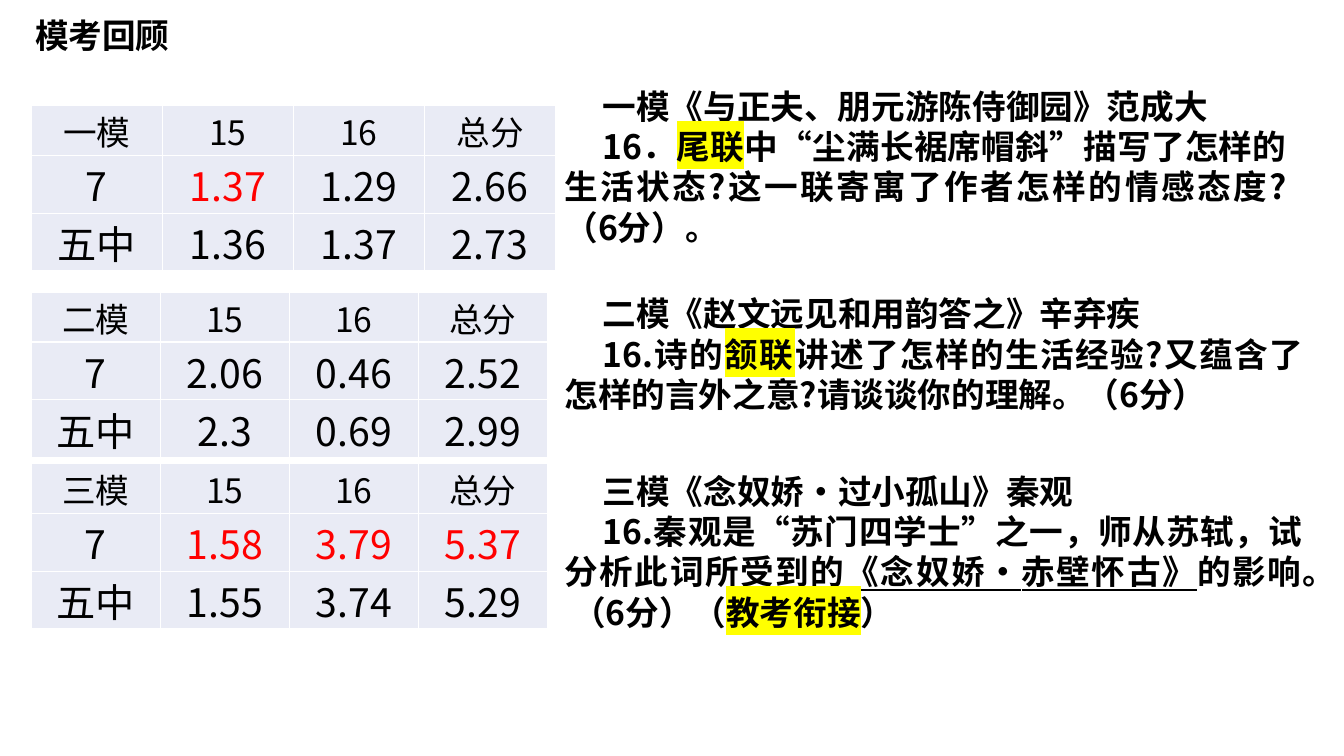
import dataclasses

import pptx
import pptx.dml.color
import pptx.enum.text
import pptx.oxml
import pptx.oxml.ns
import pptx.util
from pptx.util import Inches


@dataclasses.dataclass(frozen=True)
class Theme:
    ink: str = "000000"
    alert: str = "FF0000"
    cell: str = "E9EBF5"
    border: str = "FFFFFF"
    marker: str = "FFFF00"
    body_font: str = "Noto Sans CJK SC"
    title_font: str = "Noto Sans CJK JP"
    text_size: int = 24
    score_size: int = 28


def xml(tag, attributes="", content=""):
    namespace = pptx.oxml.ns.nsdecls("a")
    return pptx.oxml.parse_xml(f"<a:{tag} {namespace} {attributes}>{content}</a:{tag}>")


def solid(color):
    return f'<a:solidFill><a:srgbClr val="{color}"/></a:solidFill>'


class ReviewSlide:
    def __init__(self, presentation, theme):
        self.theme = theme
        self.slide = presentation.slides.add_slide(presentation.slide_layouts[6])

    def style(self, paragraph, size, color, typeface, bold=False):
        font = paragraph.font
        font.size = pptx.util.Pt(size)
        font.bold = bold
        font.color.rgb = pptx.dml.color.RGBColor.from_string(color)
        font.name = typeface
        font._element.append(xml("ea", f'typeface="{typeface}"'))

    def text(self, left, top, width, height, paragraphs, typeface, question=False):
        frame = self.slide.shapes.add_textbox(
            Inches(left), Inches(top), Inches(width), Inches(height)
        ).text_frame
        frame.word_wrap = True
        frame.auto_size = pptx.enum.text.MSO_AUTO_SIZE.SHAPE_TO_FIT_TEXT
        for index, pieces in enumerate(paragraphs):
            paragraph = frame.add_paragraph() if index else frame.paragraphs[0]
            if question:
                paragraph.alignment = pptx.enum.text.PP_ALIGN.JUSTIFY
                paragraph._p.get_or_add_pPr().set("indent", str(Inches(0.38)))
            self.style(paragraph, self.theme.text_size, self.theme.ink, typeface, True)
            for words, mark in pieces:
                run = paragraph.add_run()
                run.text = words
                if mark == "underline":
                    run.font.underline = True
                elif mark == "highlight":
                    color = f'<a:srgbClr val="{self.theme.marker}"/>'
                    run._r.get_or_add_rPr().append(xml("highlight", "", color))

    def title(self, words):
        self.text(0.25, 0.1, 2.83, 0.5, [[(words, "")]], self.theme.title_font)

    def question(self, top, width, height, heading, pieces):
        self.text(5.5, top, width, height, [[(heading, "")], pieces],
                  self.theme.body_font, question=True)

    def cell(self, cell, words, size, color, anchor):
        cell.margin_left = cell.margin_right = cell.margin_top = Inches(0.01)
        cell.margin_bottom = 0
        cell.vertical_anchor = anchor
        properties = cell._tc.get_or_add_tcPr()
        for side in ("lnL", "lnR", "lnT", "lnB"):
            properties.append(xml(side, 'w="12700"', solid(self.theme.border)))
        cell.fill.solid()
        cell.fill.fore_color.rgb = pptx.dml.color.RGBColor.from_string(self.theme.cell)
        paragraph = cell.text_frame.paragraphs[0]
        paragraph.text = words
        paragraph.alignment = pptx.enum.text.PP_ALIGN.CENTER
        self.style(paragraph, size, color, self.theme.body_font)

    def scores(self, top, column_width, exam, own_class, other_school, alerts):
        rows = [(exam, "15", "16", "总分"), ("7", *own_class), ("五中", *other_school)]
        heights = (0.49, 0.57, 0.57)
        table = self.slide.shapes.add_table(
            len(rows), 4, Inches(0.31), Inches(top),
            Inches(4 * column_width), Inches(sum(heights))
        ).table
        table.first_row = table.horz_banding = False
        for column in table.columns:
            column.width = Inches(column_width)
        anchors = pptx.enum.text.MSO_ANCHOR
        for r, values in enumerate(rows):
            table.rows[r].height = Inches(heights[r])
            for c, value in enumerate(values):
                self.cell(
                    table.cell(r, c), value,
                    self.theme.score_size if r else self.theme.text_size,
                    self.theme.alert if r == 1 and c in alerts else self.theme.ink,
                    anchors.BOTTOM if c == 3 else anchors.MIDDLE,
                )


SCORES = [
    (1.05, 1.3, "一模", ("1.37", "1.29", "2.66"), ("1.36", "1.37", "2.73"), {1}),
    (2.9, 1.28, "二模", ("2.06", "0.46", "2.52"), ("2.3", "0.69", "2.99"), set()),
    (4.6, 1.28, "三模", ("1.58", "3.79", "5.37"), ("1.55", "3.74", "5.29"), {1, 2, 3}),
]

QUESTIONS = [
    (2.86, 7.52, 1.31, "二模《赵文远见和用韵答之》辛弃疾", [
        ("16.诗的", ""),
        ("颔联", "highlight"),
        ("讲述了怎样的生活经验?又蕴含了怎样的言外之意?请谈谈你的理解。（6分）", ""),
    ]),
    (0.8, 7.36, 1.72, "一模《与正夫、朋元游陈侍御园》范成大", [
        ("16．", ""),
        ("尾联", "highlight"),
        ("中“尘满长裾席帽斜”描写了怎样的生活状态?这一联寄寓了作者怎样的情感态度?（6分）。", ""),
    ]),
    (4.62, 7.52, 1.72, "三模《念奴娇·过小孤山》秦观", [
        ("16.秦观是“苏门四学士”之一，师从苏轼，试分析此词所受到的", ""),
        ("《念奴娇·赤壁怀古》", "underline"),
        ("的影响。 （6分）（", ""),
        ("教考衔接", "highlight"),
        ("）", ""),
    ]),
]


def main():
    presentation = pptx.Presentation()
    presentation.slide_width = Inches(13.33)
    presentation.slide_height = Inches(7.5)
    review = ReviewSlide(presentation, Theme())
    for exam_scores in SCORES:
        review.scores(*exam_scores)
    for exam_question in QUESTIONS:
        review.question(*exam_question)
    review.title("模考回顾")
    presentation.save("out.pptx")


if __name__ == "__main__":
    main()
